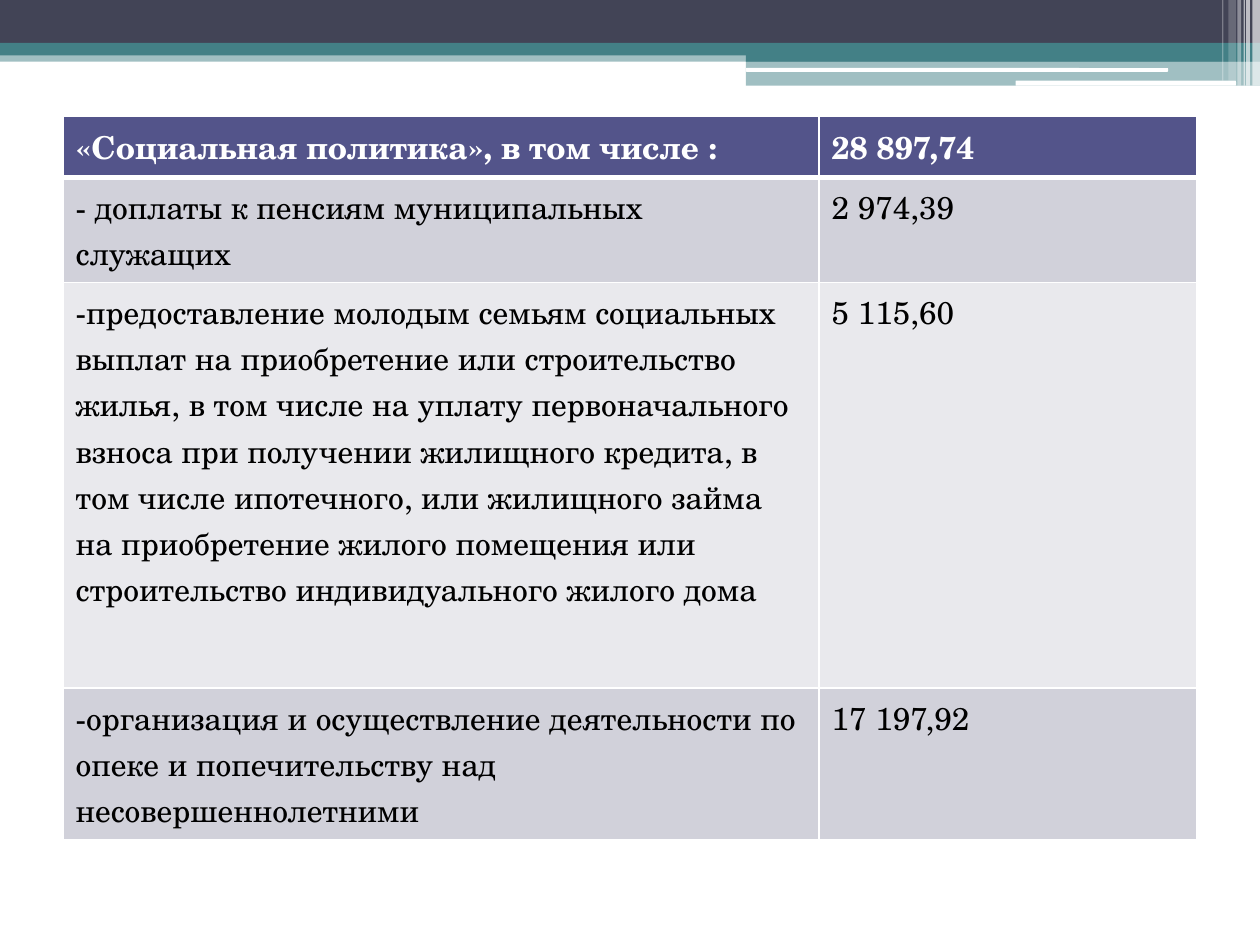
import pptx
import pptx.dml.color
import pptx.enum.shapes
import pptx.oxml
import pptx.oxml.ns
import pptx.util
from pptx.util import Inches

RGBColor = pptx.dml.color.RGBColor
WHITE = RGBColor(0xFF, 0xFF, 0xFF)
BLACK = RGBColor(0x00, 0x00, 0x00)
SLATE = RGBColor(0x42, 0x44, 0x56)
TEAL = RGBColor(0x43, 0x80, 0x86)
INDIGO = RGBColor(0x53, 0x54, 0x8A)
DARK_BAND = RGBColor(0xD1, 0xD1, 0xDA)
LIGHT_BAND = RGBColor(0xE9, 0xE9, 0xED)
FONT = "TeX Gyre Schola"

BUDGET = [
    ("«Социальная политика», в том числе :", "28 897,74"),
    ("- доплаты к пенсиям муниципальных служащих", "2 974,39"),
    ("-предоставление молодым семьям социальных выплат на приобретение или "
     "строительство жилья, в том числе на уплату первоначального взноса при "
     "получении жилищного кредита, в том числе ипотечного, или жилищного займа "
     "на приобретение жилого помещения или строительство индивидуального "
     "жилого дома", "5 115,60"),
    ("-организация и осуществление деятельности по опеке и попечительству над "
     "несовершеннолетними", "17 197,92"),
]


def add_bar(slide, left, top, width, height, color, opacity=100, rounded=False):
    """Add a borderless bar, measured in inches, with opacity in percent."""
    kinds = pptx.enum.shapes.MSO_SHAPE
    kind = kinds.ROUNDED_RECTANGLE if rounded else kinds.RECTANGLE
    shape = slide.shapes.add_shape(
        kind, Inches(left), Inches(top), Inches(width), Inches(height))
    shape.shadow.inherit = False
    shape.line.fill.background()
    shape.fill.solid()
    shape.fill.fore_color.rgb = color
    if opacity < 100:
        color_element = shape.fill._xPr.find(".//" + pptx.oxml.ns.qn("a:srgbClr"))
        alpha = pptx.oxml.parse_xml(
            f'<a:alpha {pptx.oxml.ns.nsdecls("a")} val="{opacity * 1000}"/>')
        color_element.append(alpha)


def add_header_band(slide, left, top, width):
    """Draw the layered band with its step and its stripes at the right end."""
    right = left + width
    step_width = 4.08
    step_left = right - step_width
    add_bar(slide, left, top + 0.4, width, 0.09, TEAL, 50)
    add_bar(slide, left, top, width, 0.34, SLATE)
    add_bar(slide, left, top + 0.34, width, 0.1, TEAL)
    add_bar(slide, step_left, top + 0.39, step_width, 0.1, TEAL)
    add_bar(slide, step_left, top + 0.48, step_width, 0.2, TEAL, 50)
    add_bar(slide, step_left, top + 0.54, 3.35, 0.03, WHITE, rounded=True)
    add_bar(slide, right - 1.94, top + 0.64, 1.75, 0.04, WHITE, rounded=True)
    stripes = [
        (0.06, 0.06, 0.68, 65), (0.11, 0.03, 0.68, 65), (0.13, 0.01, 0.68, 60),
        (0.18, 0.03, 0.68, 40), (0.25, 0.06, 0.64, 20), (0.3, 0.01, 0.64, 30),
    ]
    for offset, stripe_width, height, opacity in stripes:
        add_bar(slide, right - offset, top, stripe_width, height, WHITE, opacity)


def write_text(cell, text, size=18, color=BLACK, bold=False):
    """Write formatted text into a table cell."""
    paragraph = cell.text_frame.paragraphs[0]
    run = paragraph.add_run()
    run.text = text
    run.font.size = pptx.util.Pt(size)
    run.font.name = FONT
    run.font.bold = bold
    run.font.color.rgb = color


def set_borders(cell, **widths):
    """Give a cell white borders, with widths in points by side."""
    properties = cell._tc.get_or_add_tcPr()
    for position, (side, width) in enumerate(widths.items()):
        border = pptx.oxml.parse_xml(
            f'<a:ln{side} {pptx.oxml.ns.nsdecls("a")} w="{pptx.util.Pt(width)}">'
            f'<a:solidFill><a:srgbClr val="{WHITE}"/></a:solidFill></a:ln{side}>')
        properties.insert(position, border)


def add_budget_table(slide, left, top, width, row_heights):
    """Build the spending table with a header row and alternating bands."""
    frame = slide.shapes.add_table(
        len(BUDGET), 2, Inches(left), Inches(top), Inches(width),
        Inches(sum(row_heights)))
    table = frame.table
    table.columns[0].width = Inches(width * 2 / 3)
    table.columns[1].width = Inches(width / 3)
    for index, (entry, height) in enumerate(zip(BUDGET, row_heights)):
        table.rows[index].height = Inches(height)
        header = index == 0
        band = INDIGO if header else DARK_BAND if index % 2 else LIGHT_BAND
        for cell, text in zip(table.rows[index].cells, entry):
            write_text(cell, text, color=WHITE if header else BLACK, bold=header)
            cell.fill.solid()
            cell.fill.fore_color.rgb = band
            set_borders(cell, L=1, R=1, T=3 if index == 1 else 1,
                        B=3 if header else 1)


def main():
    """Build and save the presentation."""
    presentation = pptx.Presentation()
    presentation.slide_width = Inches(10)
    presentation.slide_height = Inches(7.5)
    slide = presentation.slides.add_slide(presentation.slide_layouts[6])
    add_header_band(slide, 0, 0, 10)
    add_budget_table(slide, 0.5, 0.92, 9, [0.46, 0.66, 3.22, 1.16])
    presentation.save("out.pptx")


if __name__ == "__main__":
    main()
